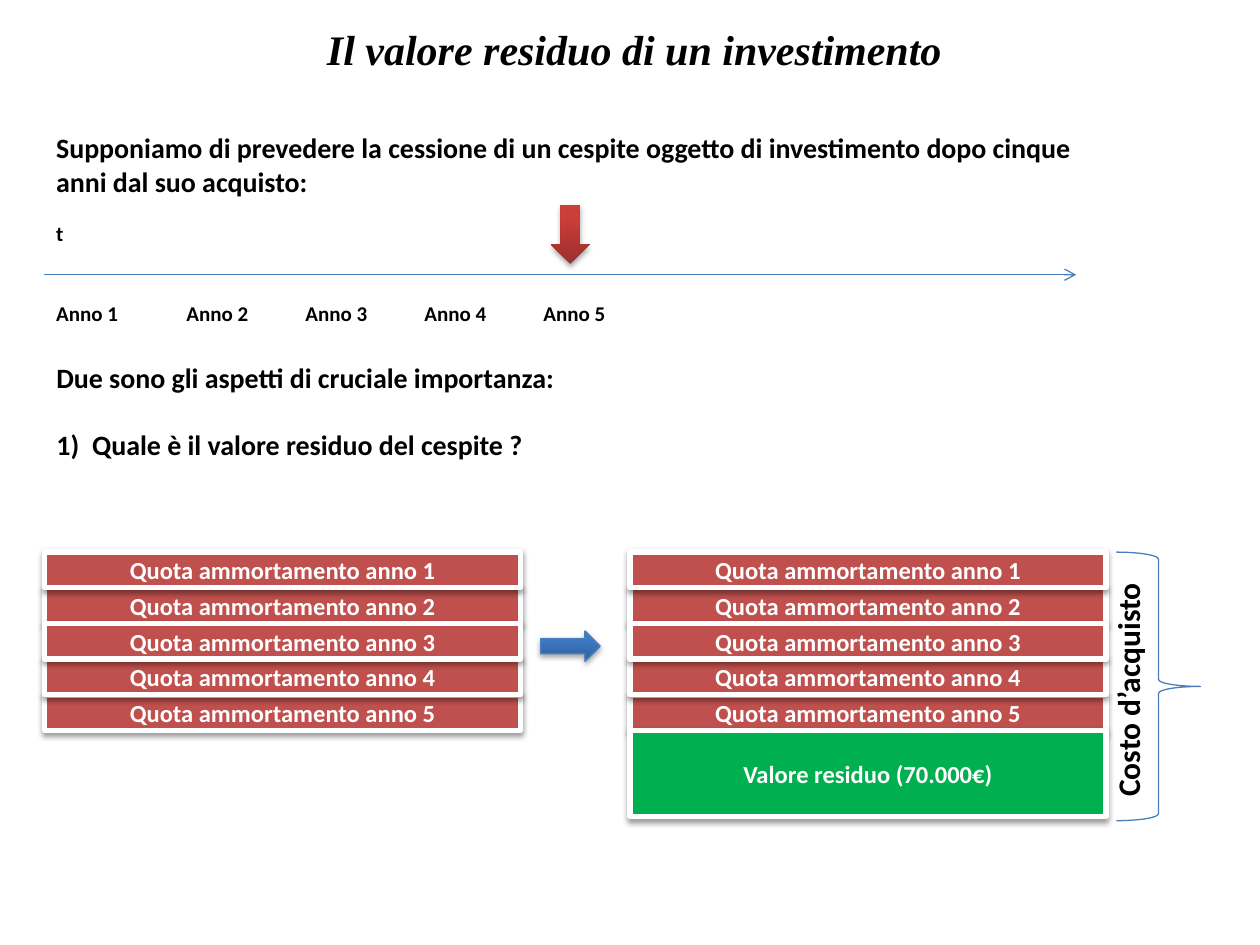
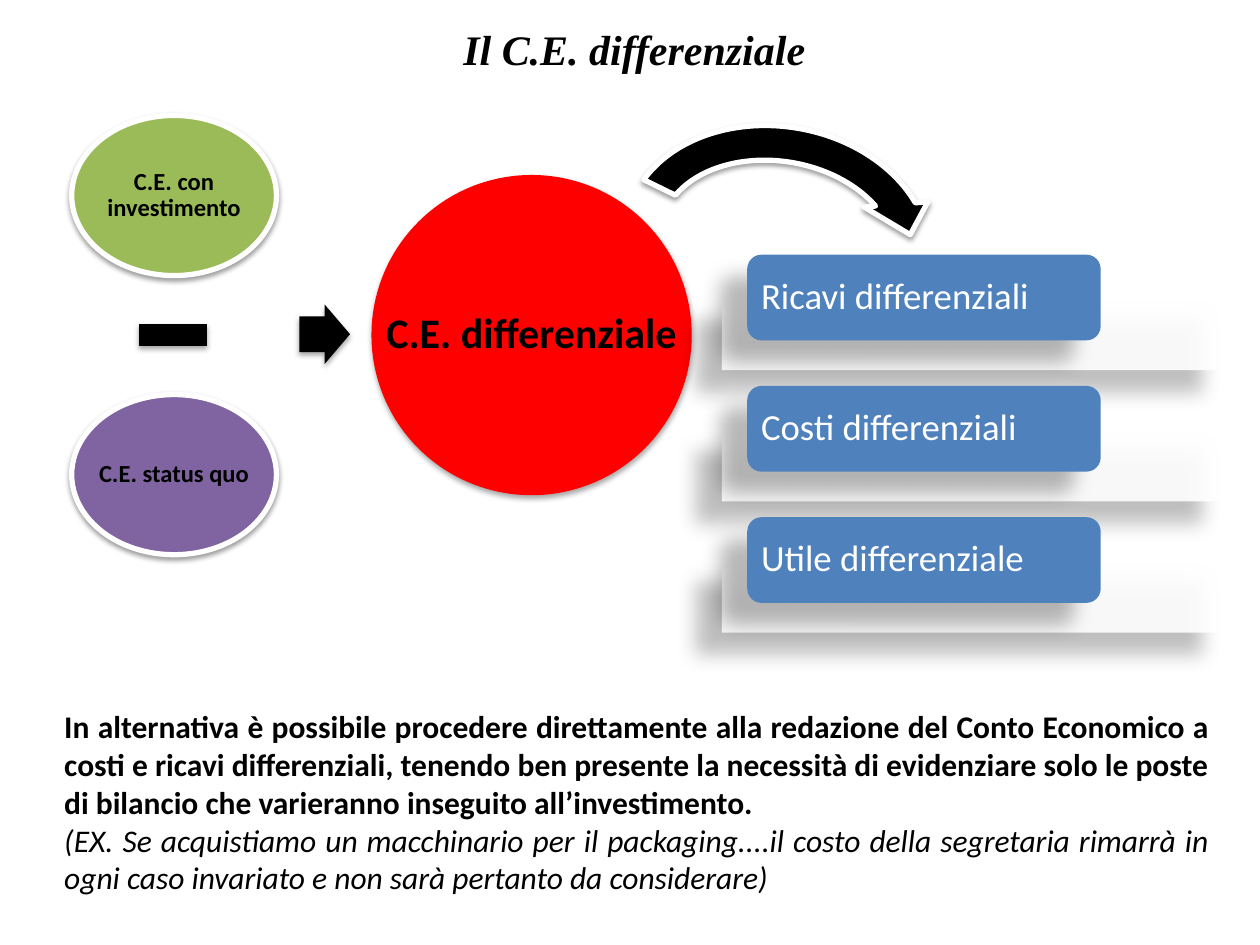
from lxml import etree
from pptx import Presentation
from pptx.dml.color import RGBColor
from pptx.enum import shapes, text
from pptx.oxml import ns
from pptx.util import Pt

BLACK = RGBColor(0x00, 0x00, 0x00)
WHITE = RGBColor(0xFF, 0xFF, 0xFF)
BRICK = RGBColor(0xC0, 0x50, 0x4D)
DARK_RED = RGBColor(0x9C, 0x2F, 0x2D)
BRIGHT_RED = RGBColor(0xCB, 0x3E, 0x3A)
RED = RGBColor(0xFF, 0x00, 0x00)
GREEN = RGBColor(0x00, 0xB0, 0x50)
OLIVE = RGBColor(0x9B, 0xBB, 0x59)
PURPLE = RGBColor(0x80, 0x64, 0xA2)
BLUE = RGBColor(0x4F, 0x81, 0xBD)
LINE_BLUE = RGBColor(0x4B, 0x7E, 0xBC)
DARK_BLUE = RGBColor(0x2F, 0x5F, 0x99)
BRIGHT_BLUE = RGBColor(0x3D, 0x7C, 0xC7)

SOFT_SHADOW = (35, 3.1, 1.8, 90)
EDGE_SHADOW = (38, 3.1, 1.6, 90)
LONG_SHADOW = (28, 11.8, 19.7, 141)

KIND = shapes.MSO_SHAPE
ALIGN = text.PP_ALIGN
ANCHOR = text.MSO_ANCHOR


def sub(parent, tag, **attributes):
    values = {name: str(value) for name, value in attributes.items()}
    return etree.SubElement(parent, ns.qn(tag), values)


def write(frame, words, font="Calibri", size=16, color=BLACK, bold=True,
          italic=False, align=ALIGN.LEFT, spacing=None, before=0):
    paragraph = frame.paragraphs[0]
    if paragraph.runs:
        paragraph = frame.add_paragraph()
    paragraph.alignment = align
    paragraph.line_spacing = spacing
    paragraph.space_before = Pt(before)
    run = paragraph.add_run()
    run.text = words
    run.font.name = font
    run.font.size = Pt(size)
    run.font.color.rgb = color
    run.font.bold = bold
    run.font.italic = italic
    return paragraph


class Deck:
    def __init__(self):
        self.show = Presentation()
        self.show.slide_width = Pt(720)
        self.show.slide_height = Pt(540)
        self.slide = None

    def new_slide(self, title):
        self.slide = self.show.slides.add_slide(self.show.slide_layouts[1])
        heading = self.slide.shapes.title
        self.place(heading, 25, 9.5, 675, 36.5)
        write(heading.text_frame, title, font="Times New Roman", size=24,
              italic=True, align=ALIGN.CENTER)

    def place(self, holder, left, top, width, height):
        holder.left, holder.top = Pt(left), Pt(top)
        holder.width, holder.height = Pt(width), Pt(height)
        holder.text_frame.auto_size = text.MSO_AUTO_SIZE.NONE

    def body(self, *box):
        holder = self.slide.placeholders[1]
        self.place(holder, *box)
        return holder.text_frame

    def bullet(self, paragraph, numbered=False):
        indent = Pt(20.5) if numbered else 0
        properties = paragraph._p.get_or_add_pPr()
        properties.set("marL", str(indent))
        properties.set("indent", str(-indent))
        if numbered:
            sub(properties, "a:buFont", typeface="+mj-lt")
            sub(properties, "a:buAutoNum", type="arabicParenR")
        else:
            sub(properties, "a:buNone")

    def label(self, words, left, top, width, height, vertical=False, **style):
        frame = self.slide.shapes.add_textbox(
            Pt(left), Pt(top), Pt(width), Pt(height)).text_frame
        frame.word_wrap = True
        if vertical:
            frame._txBody.bodyPr.set("vert", "vert270")
        write(frame, words, **style)

    def shape(self, kind, left, top, width, height, fill=None, line=None,
              line_width=3, shadow=None, opacity=None):
        figure = self.slide.shapes.add_shape(
            kind, Pt(left), Pt(top), Pt(width), Pt(height))
        if fill is None:
            figure.fill.background()
        elif isinstance(fill, RGBColor):
            figure.fill.solid()
            figure.fill.fore_color.rgb = fill
        else:
            figure.fill.gradient()
            figure.fill.gradient_angle = 90
            stops = figure.fill.gradient_stops
            for stop, color, position in zip(stops, fill, (0, 0.8)):
                stop.color.rgb = color
                stop.position = position
        if opacity:
            color = figure._element.spPr.find(".//" + ns.qn("a:srgbClr"))
            sub(color, "a:alpha", val=opacity * 1000)
        if line is None:
            figure.line.fill.background()
        else:
            figure.line.color.rgb = line
            figure.line.width = Pt(line_width)
        figure.shadow.inherit = False
        if shadow:
            self.cast(figure, *shadow)
        return figure

    def cast(self, figure, opacity, blur, distance, angle):
        effects = figure._element.spPr.find(ns.qn("a:effectLst"))
        outer = sub(effects, "a:outerShdw", blurRad=Pt(blur), dist=Pt(distance),
                    dir=angle * 60000, rotWithShape=0)
        sub(sub(outer, "a:srgbClr", val=BLACK), "a:alpha", val=opacity * 1000)

    def caption(self, figure, words, margin=7.2, wrap=True, **style):
        frame = figure.text_frame
        frame.word_wrap = wrap
        frame.vertical_anchor = ANCHOR.MIDDLE
        frame.margin_left = frame.margin_right = Pt(margin)
        frame.margin_top = frame.margin_bottom = 0
        write(frame, words, **style)

    def arrow(self, x1, y1, x2, y2):
        line = self.slide.shapes.add_connector(
            shapes.MSO_CONNECTOR.STRAIGHT, Pt(x1), Pt(y1), Pt(x2), Pt(y2))
        line.line.color.rgb = LINE_BLUE
        line.line.width = Pt(0.75)
        sub(line.line._get_or_add_ln(), "a:tailEnd", type="arrow")
        sub(line._element.spPr, "a:effectLst")

    def bar(self, words, left, top, height, fill):
        block = self.shape(KIND.RECTANGLE, left, top, 272, height, fill,
                           line=WHITE, shadow=EDGE_SHADOW)
        self.caption(block, words, size=14, color=WHITE, align=ALIGN.CENTER)

    def quota_stack(self, left):
        for year in (5, 4, 2, 3, 1):
            self.bar(f"Quota ammortamento anno {year}", left,
                     315.5 + 20.4 * (year - 1), 20.4, BRICK)

    def statement(self, words, box, fill, size=14, wrap=False, **look):
        circle = self.shape(KIND.OVAL, *box, fill=fill, **look)
        self.caption(circle, words, margin=1.5, wrap=wrap, size=size,
                     align=ALIGN.CENTER, spacing=0.9)


def residual_value(deck):
    deck.new_slide("Il valore residuo di un investimento")
    questions = deck.body(25, 202.5, 623.5, 85)
    deck.bullet(write(questions, "Due sono gli aspetti di cruciale importanza:"))
    deck.bullet(write(questions, "Quale è il valore residuo del cespite ?",
                      before=19.2), numbered=True)

    deck.label("Supponiamo di prevedere la cessione di un cespite oggetto di "
               "investimento dopo cinque anni dal suo acquisto:",
               25, 71, 623.5, 46)
    deck.arrow(25, 157, 615, 157)
    year_lefts = [25] + [99.4 + 68 * step for step in range(4)]
    for year, left in enumerate(year_lefts, 1):
        deck.label(f"Anno {year}", left, 168, 57, 22, size=12)
    deck.label("t", 25, 122.5, 57, 22, size=12)
    deck.shape(KIND.DOWN_ARROW, 314.8, 117, 22.2, 33.8,
               (DARK_RED, BRIGHT_RED), shadow=SOFT_SHADOW)

    deck.quota_stack(25.5)
    deck.shape(KIND.RIGHT_ARROW, 309, 360.5, 34, 17.5, (DARK_BLUE, BRIGHT_BLUE),
               line=LINE_BLUE, line_width=0.75, shadow=SOFT_SHADOW)
    deck.quota_stack(360)
    deck.bar("Valore residuo (70.000€)", 360, 417.5, 49, GREEN)
    deck.label("Costo d’acquisto", 630, 315.5, 36, 157.5, vertical=True,
               size=18, align=ALIGN.CENTER)
    deck.shape(KIND.RIGHT_BRACE, 638, 315.5, 48, 153.5,
               line=LINE_BLUE, line_width=0.75)


def differential_statement(deck):
    deck.new_slide("Il C.E. differenziale")
    remarks = deck.body(29.5, 400.5, 669, 116.5)
    deck.bullet(write(
        remarks, "In alternativa è possibile procedere direttamente alla "
        "redazione del Conto Economico a costi e ricavi differenziali, tenendo "
        "ben presente la necessità di evidenziare solo le poste di bilancio che "
        "varieranno inseguito all’investimento.", size=18, align=ALIGN.JUSTIFY))
    deck.bullet(write(
        remarks, "(EX. Se acquistiamo un macchinario per il packaging....il "
        "costo della segretaria rimarrà in ogni caso invariato e non sarà "
        "pertanto da considerare)", size=18, bold=False, italic=True,
        align=ALIGN.JUSTIFY))

    rim = dict(line=WHITE, shadow=EDGE_SHADOW)
    deck.statement("C.E. con investimento", (41, 66, 117, 91.5), OLIVE,
                   wrap=True, **rim)
    deck.shape(KIND.MATH_MINUS, 72.5, 165, 53, 53, BLACK, shadow=SOFT_SHADOW)
    deck.statement("C.E. status quo", (41, 225.5, 117, 91.5), PURPLE, **rim)
    equals = deck.shape(KIND.RIGHT_ARROW, 171, 174, 29, 34, BLACK,
                        shadow=SOFT_SHADOW)
    equals.adjustments[0] = 0.6
    deck.statement("C.E. differenziale", (212.3, 100, 183, 183), RED, size=24,
                   shadow=SOFT_SHADOW)

    components = ("Ricavi differenziali", "Costi differenziali",
                  "Utile differenziale")
    for row, component in enumerate(components):
        top = 145.5 + 75 * row
        deck.shape(KIND.RECTANGLE, 412.5, top + 24.5, 289.5, 41.5, WHITE,
                   shadow=LONG_SHADOW, opacity=90)
        tab = deck.shape(KIND.ROUNDED_RECTANGLE, 427, top, 202, 49, BLUE,
                         shadow=LONG_SHADOW)
        deck.caption(tab, component, margin=5.5, size=21, color=WHITE,
                     bold=False, spacing=0.9)

    sweep = deck.shape(KIND.CIRCULAR_ARROW, 348.5, 64, 192, 152.5, BLACK, **rim)
    sweep.rotation = 9.5
    for index, value in enumerate((0.13, 8.69, 198.83, 117.95, 0.12)):
        sweep.adjustments[index] = value


def main():
    deck = Deck()
    residual_value(deck)
    differential_statement(deck)
    deck.show.save("out.pptx")


if __name__ == "__main__":
    main()
